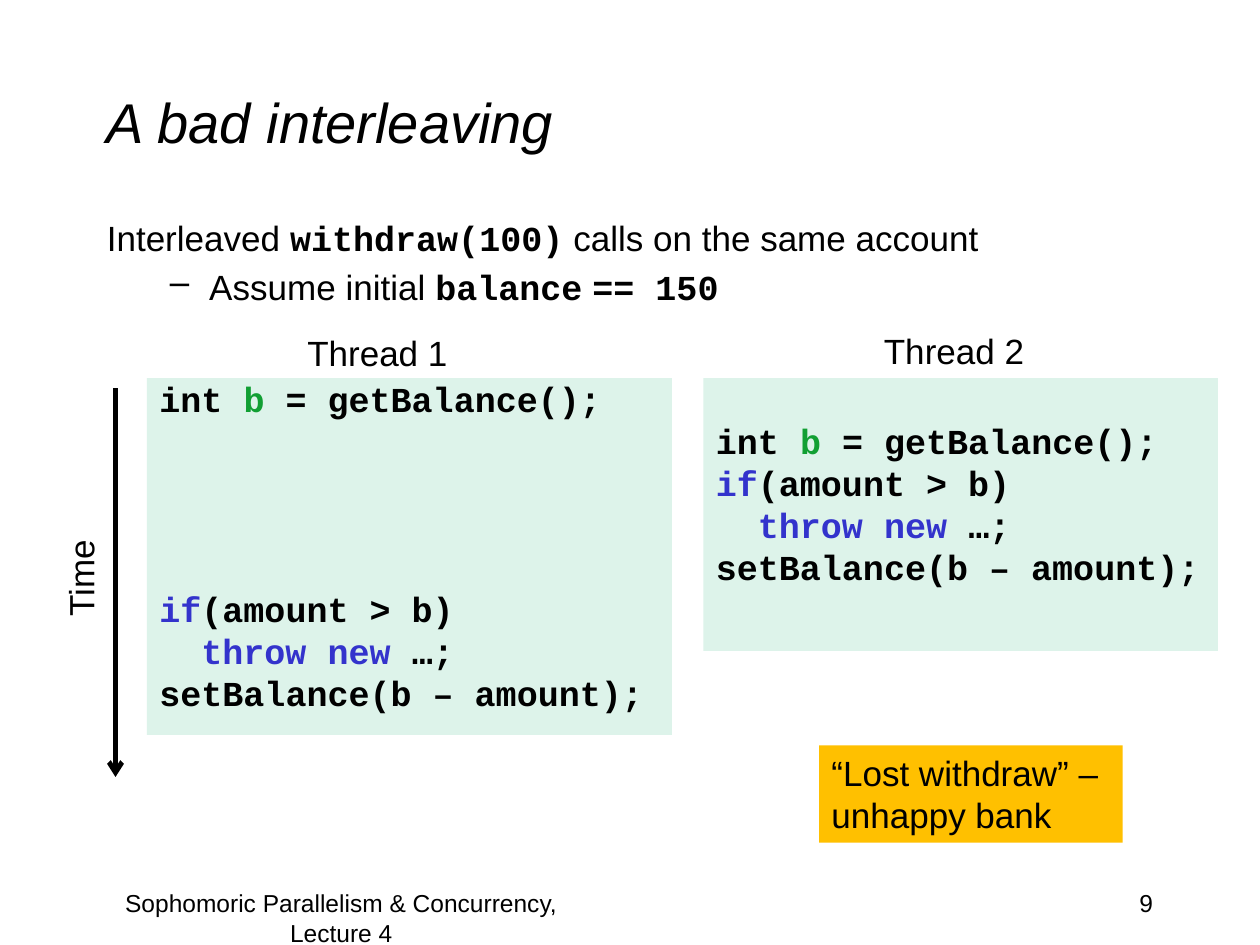
from lxml import etree
from pptx import Presentation
from pptx.dml.color import RGBColor
from pptx.enum.shapes import MSO_CONNECTOR, MSO_SHAPE
from pptx.enum.text import MSO_ANCHOR, PP_ALIGN
from pptx.oxml.ns import qn
from pptx.util import Pt

BLACK = RGBColor(0x00, 0x00, 0x00)
GREEN = RGBColor(0x11, 0x9F, 0x33)
BLUE = RGBColor(0x33, 0x33, 0xCC)
MINT = RGBColor(0xDD, 0xF3, 0xEA)
AMBER = RGBColor(0xFF, 0xC0, 0x00)

TOP, MIDDLE = MSO_ANCHOR.TOP, MSO_ANCHOR.MIDDLE
LEFT, CENTER, RIGHT = PP_ALIGN.LEFT, PP_ALIGN.CENTER, PP_ALIGN.RIGHT
RECTANGLE, STRAIGHT = MSO_SHAPE.RECTANGLE, MSO_CONNECTOR.STRAIGHT

TEXT = {"name": "Arial", "size": Pt(20), "bold": False, "italic": False}
CODE = {**TEXT, "name": "Courier New", "bold": True}
TITLE = {**TEXT, "size": Pt(32), "italic": True}
FOOTER = {**TEXT, "size": Pt(14)}

CODE_LINE, CODE_GAP = 20, 4
CODE_PITCH = CODE_LINE + CODE_GAP
CODE_INDENT = 24  # two characters of code
INSET = 3.6

READ = [("int ", BLACK), ("b", GREEN), (" = getBalance();", BLACK)]
CHECK = [("if", BLUE), ("(amount > b)", BLACK)]
THROW = [("throw new", BLUE), (" …;", BLACK)]
WRITE = [("setBalance(b – amount);", BLACK)]


def add_span(para, text, style, color=BLACK):
    span = para.add_run()
    span.text = text
    for name, value in style.items():
        setattr(span.font, name, value)
    span.font.color.rgb = color


def set_indent(para, margin, first=0):
    properties = para._p.get_or_add_pPr()
    properties.set("marL", str(Pt(margin)))
    properties.set("indent", str(Pt(first)))
    return properties


def add_text(page, box, lines, style=TEXT, align=LEFT, anchor=TOP, wrap=True):
    """Place a text box; lines are strings in one style."""
    shape = page.shapes.add_textbox(*map(Pt, box))
    frame = shape.text_frame
    frame.word_wrap = wrap
    frame.vertical_anchor = anchor
    for number, line in enumerate(lines):
        para = frame.add_paragraph() if number else frame.paragraphs[0]
        para.alignment = align
        add_span(para, line, style)
    return shape


def add_intro(page, box):
    frame = add_text(page, box, ["Interleaved "]).text_frame
    first = frame.paragraphs[0]
    add_span(first, "withdraw(100)", CODE)
    add_span(first, " calls on the same account", TEXT)
    # Dashed second-level line
    second = frame.add_paragraph()
    properties = set_indent(second, 58.5, -22.5)
    second.space_before = Pt(4)
    etree.SubElement(properties, qn("a:buChar")).set("char", "–")
    for text, style in (("Assume initial ", TEXT), ("balance", CODE),
                        (" ", TEXT), ("== 150", CODE)):
        add_span(second, text, style)


def add_code(page, box, steps):
    """Place a code panel; steps are (time slot, spans) pairs."""
    panel = page.shapes.add_shape(RECTANGLE, *map(Pt, box))
    panel.shadow.inherit = False
    panel.fill.solid()
    panel.fill.fore_color.rgb = MINT
    panel.line.fill.background()
    frame = panel.text_frame
    frame.word_wrap = True
    frame.vertical_anchor = TOP
    frame.margin_top = Pt(INSET + steps[0][0] * CODE_PITCH)
    previous = steps[0][0]
    for number, (slot, spans) in enumerate(steps):
        para = frame.add_paragraph() if number else frame.paragraphs[0]
        para.alignment = LEFT
        para.line_spacing = Pt(CODE_LINE)
        if number:
            para.space_before = Pt((slot - previous) * CODE_PITCH - CODE_LINE)
        set_indent(para, CODE_INDENT if spans is THROW else 0)
        for text, color in spans:
            add_span(para, text, CODE, color)
        previous = slot


def add_time_axis(page, box):
    left, top, width, height = box
    arrow = page.shapes.add_connector(
        STRAIGHT, Pt(left + width), Pt(top), Pt(left + width), Pt(top + height))
    arrow.line.color.rgb = BLACK
    arrow.line.width = Pt(2.75)
    etree.SubElement(arrow.line._get_or_add_ln(), qn("a:tailEnd")).set("type", "arrow")
    etree.SubElement(arrow._element.spPr, qn("a:effectLst"))
    # Label turned to read upwards
    label = add_text(page, (16.6, 314, 59, 31.5), ["Time"], wrap=False)
    label.rotation = 270


def add_verdict(page, box):
    note = add_text(page, box, ["“Lost withdraw” –", "unhappy bank"])
    note.fill.solid()
    note.fill.fore_color.rgb = AMBER


def add_footer(page, box):
    left, top, width, height = box
    add_text(page, (left, top, 306, height),
             ["Sophomoric Parallelism & Concurrency, Lecture 4"], FOOTER, CENTER)
    add_text(page, (left + width - 150, top, 150, height), ["9"], FOOTER, RIGHT)


def main():
    deck = Presentation()
    deck.slide_width, deck.slide_height = Pt(720), Pt(540)
    page = deck.slides.add_slide(deck.slide_layouts[6])

    # Heading and introduction
    add_text(page, (54, 24, 612, 90), ["A bad interleaving"], TITLE, anchor=MIDDLE)
    add_intro(page, (54, 120, 612, 66))

    # Two threads on a shared time scale
    add_code(page, (84, 216, 300, 204), [(0, READ), (5, CHECK), (6, THROW), (7, WRITE)])
    add_code(page, (402, 216, 294, 156), [(1, READ), (2, CHECK), (3, THROW), (4, WRITE)])
    add_text(page, (168.5, 186, 95, 31.5), ["Thread 1"], wrap=False)
    add_text(page, (498, 184.5, 95, 31.5), ["Thread 2"], wrap=False)
    add_time_axis(page, (16, 222, 50, 222))

    # Outcome and footer
    add_verdict(page, (468, 426, 173.5, 55.5))
    add_footer(page, (42, 504, 624, 36))
    deck.save("out.pptx")


if __name__ == "__main__":
    main()
